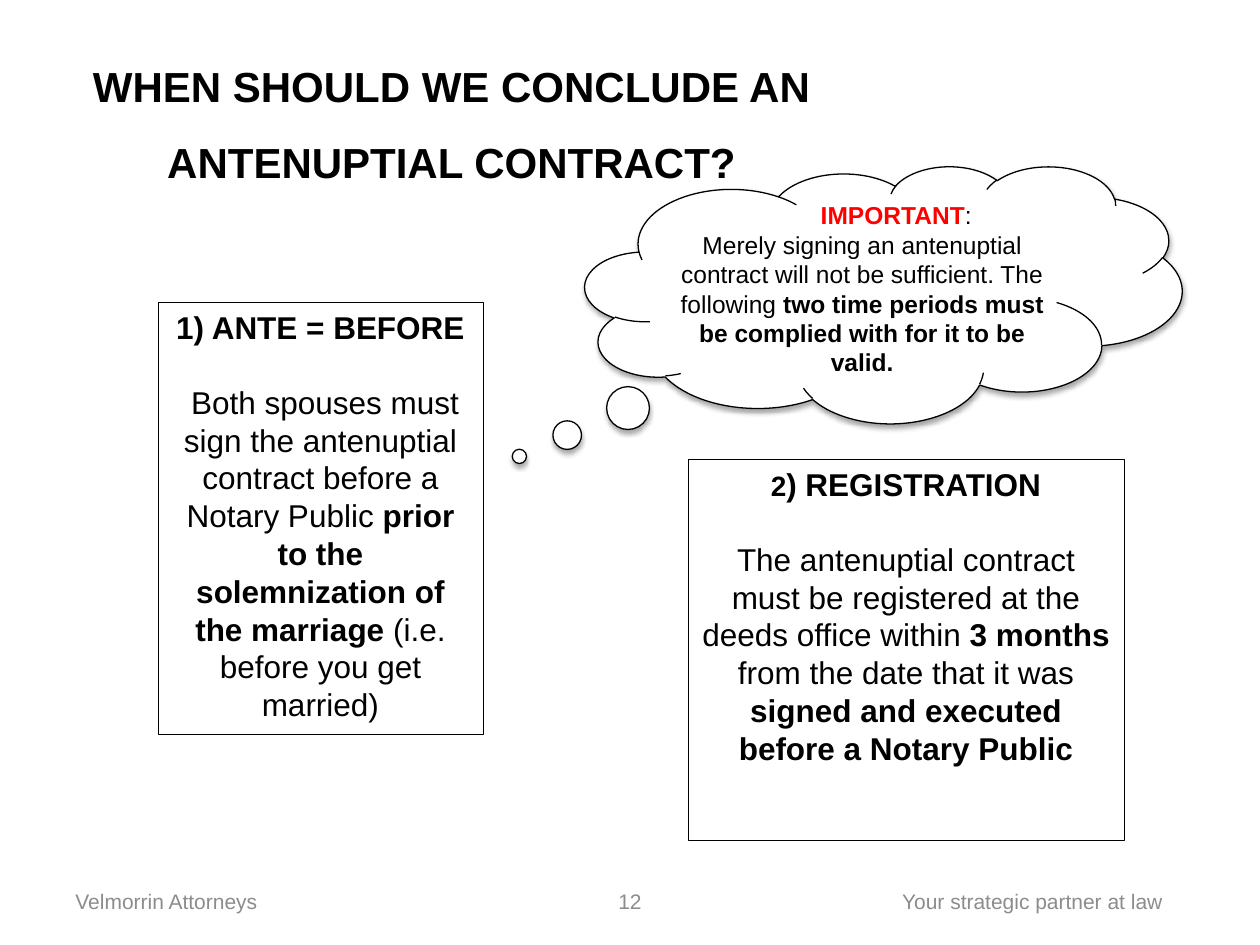
from dataclasses import dataclass

import pptx
import pptx.dml.color
import pptx.enum.shapes
import pptx.enum.text
import pptx.oxml
import pptx.oxml.ns
import pptx.util

EMU_PER_PX = 914400 / 126
COLORS = {"ink": "000000", "paper": "FFFFFF", "alert": "FF0000", "footer": "8C8C8C"}
FONT = "Arial"
ALIGN = pptx.enum.text.PP_ALIGN
ANCHOR = pptx.enum.text.MSO_ANCHOR
SHAPE = pptx.enum.shapes.MSO_SHAPE


@dataclass
class Span:
    text: str
    size: int = 18
    bold: bool = False
    color: str = "ink"


@dataclass
class Para:
    spans: list[Span]
    align: ALIGN = ALIGN.CENTER
    before: int = 0
    left: int = 0
    first_line: int = 0


@dataclass
class Box:
    x: int
    y: int
    w: int
    h: int
    paras: list[Para]
    anchor: ANCHOR = ANCHOR.TOP


def px(length: int) -> int:
    return round(length * EMU_PER_PX)


def rgb(name: str) -> pptx.dml.color.RGBColor:
    return pptx.dml.color.RGBColor.from_string(COLORS[name])


def frame_of(box: Box) -> tuple[int, int, int, int]:
    return px(box.x), px(box.y), px(box.w), px(box.h)


def write(frame, box: Box) -> None:
    frame.word_wrap = True
    frame.vertical_anchor = box.anchor
    for index, para in enumerate(box.paras):
        line = frame.add_paragraph() if index else frame.paragraphs[0]
        line.alignment = para.align
        if para.before:
            line.space_before = pptx.util.Pt(para.before)
        properties = line._p.get_or_add_pPr()
        properties.set("marL", str(px(para.left)))
        properties.set("indent", str(px(para.first_line)))
        for span in para.spans:
            run = line.add_run()
            run.text = span.text
            run.font.name = FONT
            run.font.size = pptx.util.Pt(span.size)
            run.font.bold = span.bold
            run.font.color.rgb = rgb(span.color)


def draw_shape(slide, kind: SHAPE, box: Box, line_width: float):
    shape = slide.shapes.add_shape(kind, *frame_of(box))
    shape.shadow.inherit = False
    shape.fill.background()
    shape.line.color.rgb = rgb("ink")
    shape.line.width = pptx.util.Pt(line_width)
    write(shape.text_frame, box)
    return shape


def draw_title(slide, box: Box) -> None:
    title = slide.shapes.title
    title.left, title.top, title.width, title.height = frame_of(box)
    write(title.text_frame, box)
    title.text_frame.auto_size = pptx.enum.text.MSO_AUTO_SIZE.NONE
    title.text_frame.paragraphs[0].line_spacing = 1.5


def draw_footer(slide, x: int, w: int, text: str, align: ALIGN) -> None:
    box = Box(x, 876, w, 50, [Para([Span(text, 12, color="footer")], align)], ANCHOR.MIDDLE)
    write(slide.shapes.add_textbox(*frame_of(box)).text_frame, box)


def add_soft_shadow(shape) -> None:
    effects = shape._element.spPr.find(pptx.oxml.ns.qn("a:effectLst"))
    effects.append(pptx.oxml.parse_xml(
        f'<a:outerShdw {pptx.oxml.ns.nsdecls("a")} blurRad="{pptx.util.Pt(3.1)}" '
        f'dist="{pptx.util.Pt(1.8)}" dir="5400000" rotWithShape="0">'
        f'<a:srgbClr val="{COLORS["ink"]}"><a:alpha val="35000"/></a:srgbClr></a:outerShdw>'))


TITLE = Box(74, 44, 755, 134, [
    Para([Span("WHEN SHOULD WE CONCLUDE AN ANTENUPTIAL CONTRACT?", 24, True)]),
], ANCHOR.MIDDLE)

FOOTERS = [
    (63, 294, "Velmorrin Attorneys", ALIGN.LEFT),
    (868, 329, "Your strategic partner at law", ALIGN.CENTER),
    (483, 294, "12", ALIGN.CENTER),
]

TIME_PERIODS = [
    Box(158, 302, 325, 432, [
        Para([Span("1) ANTE = BEFORE", bold=True)]),
        Para([
            Span("Both spouses must sign the antenuptial contract before a Notary Public "),
            Span("prior to the solemnization of the marriage", bold=True),
            Span(" (i.e. before you get married)"),
        ], before=21, first_line=9),
    ]),
    Box(688, 459, 436, 381, [
        Para([Span("2", 16, True), Span(") REGISTRATION", bold=True)]),
        Para([
            Span("The antenuptial contract must be registered at the deeds office within "),
            Span("3 months", bold=True),
            Span(" from the date that it was "),
            Span("signed and executed before a Notary Public", bold=True),
        ], before=21),
    ]),
]

WARNING = Box(585, 166, 597, 257, [
    Para([Span("IMPORTANT", 14, True, "alert"), Span(":", 14)], left=68),
    Para([
        Span("Merely signing an antenuptial contract will not be sufficient. The following ", 14),
        Span("two time periods must be complied with for it to be valid.", 14, True),
    ]),
], ANCHOR.MIDDLE)


def main() -> None:
    deck = pptx.Presentation()
    deck.slide_width, deck.slide_height = px(1260), px(945)
    slide = deck.slides.add_slide(deck.slide_layouts[5])
    slide.background.fill.solid()
    slide.background.fill.fore_color.rgb = rgb("paper")

    # Footer and title
    for footer in FOOTERS:
        draw_footer(slide, *footer)
    draw_title(slide, TITLE)

    # The two time periods
    for period in TIME_PERIODS:
        draw_shape(slide, SHAPE.RECTANGLE, period, 0.25)

    # Thought cloud pointing at the first period
    cloud = draw_shape(slide, SHAPE.CLOUD_CALLOUT, WARNING, 0.75)
    cloud.adjustments[0], cloud.adjustments[1] = -0.61, 0.63
    cloud.fill.solid()
    cloud.fill.fore_color.rgb = rgb("paper")
    add_soft_shadow(cloud)

    deck.save("out.pptx")


if __name__ == "__main__":
    main()
